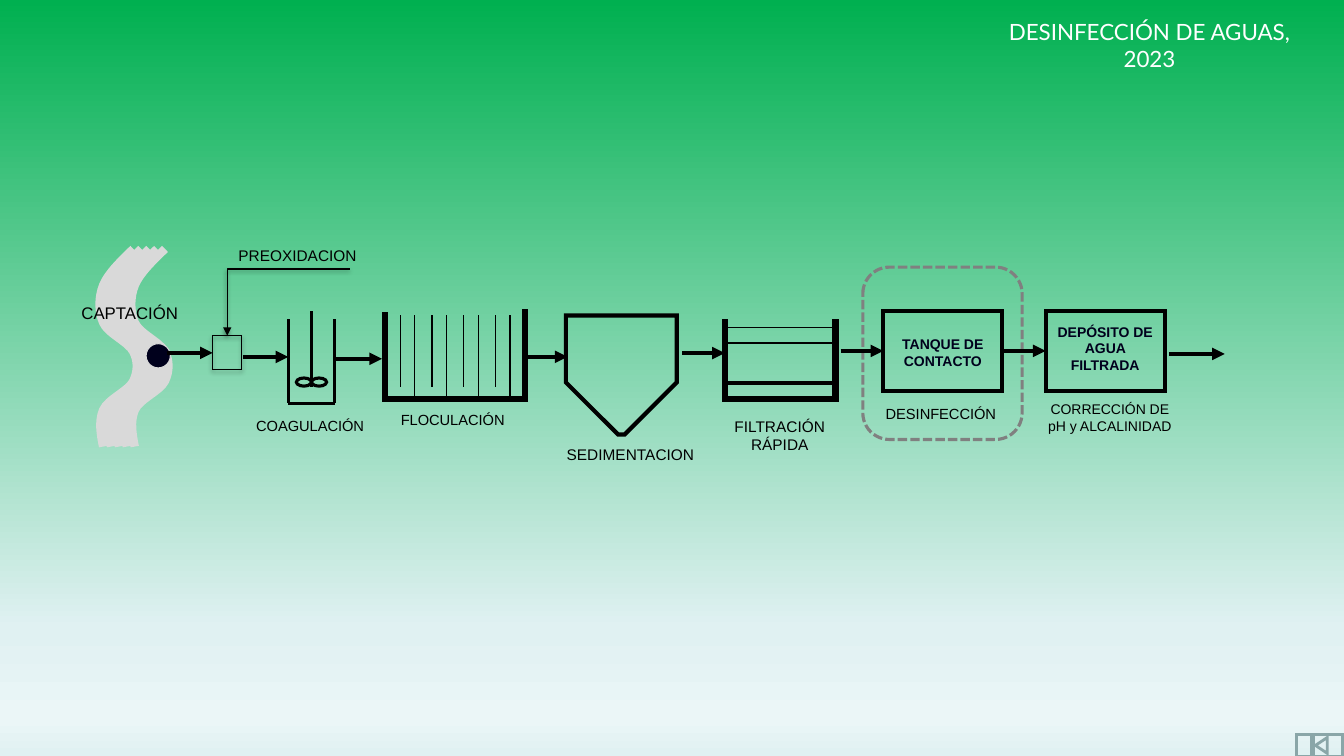
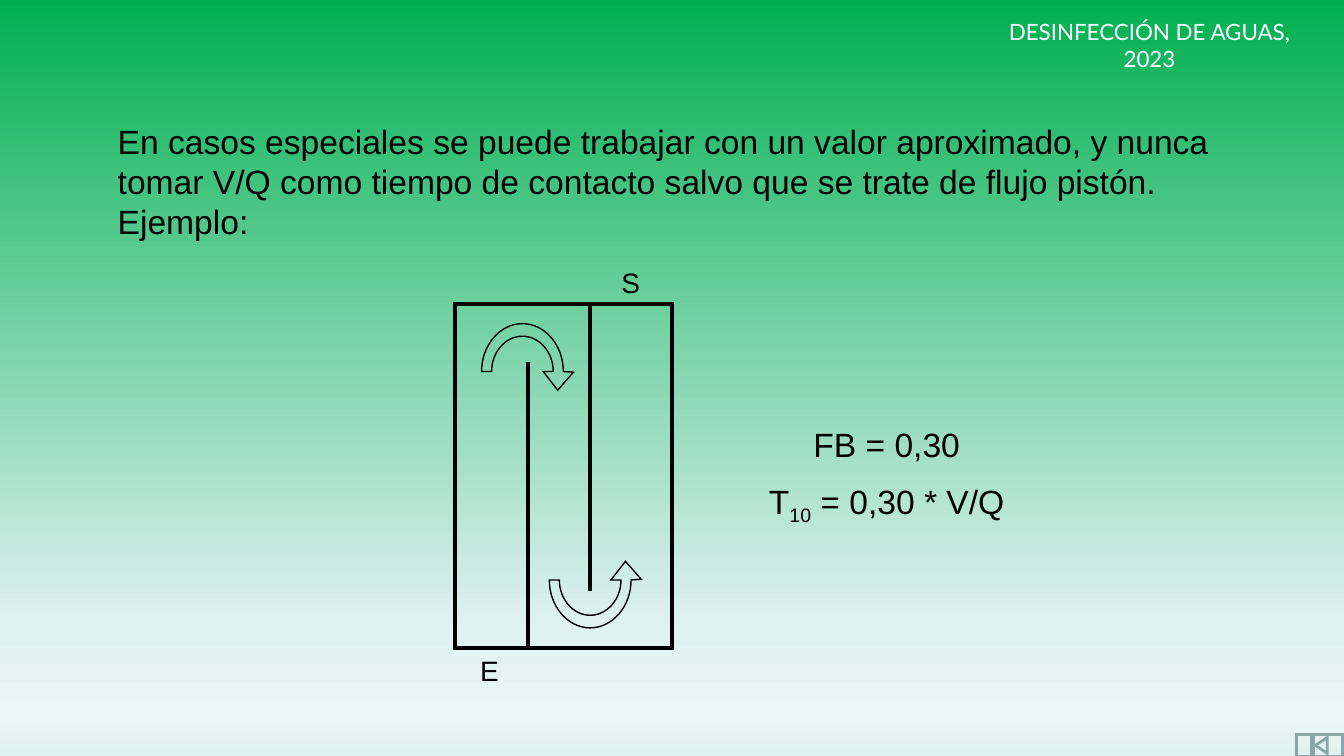
import copy
from dataclasses import dataclass

import pptx
import pptx.dml.color
import pptx.enum.dml
import pptx.enum.shapes
import pptx.enum.text
import pptx.oxml.ns
import pptx.util
from lxml import etree

Pt = pptx.util.Pt
qn = pptx.oxml.ns.qn
SHAPE = pptx.enum.shapes.MSO_SHAPE
CONNECTOR = pptx.enum.shapes.MSO_CONNECTOR
ANCHOR = pptx.enum.text.MSO_ANCHOR
ALIGN = pptx.enum.text.PP_ALIGN
TOP, LEFT, BOTTOM, RIGHT = range(4)


@dataclass(frozen=True)
class Theme:
    # Colours
    ink: str = "000000"
    navy: str = "00001C"
    white: str = "FFFFFF"
    river: str = "D9D9D9"
    frame: str = "808080"
    button: str = "8AA6A8"
    background: tuple = ((0, "00B050"), (0.83, "E0F1F2"), (0.95, "EBF6F7"), (1, "E0F1F2"))
    # Fonts and type sizes
    font: str = "Arial"
    title_font: str = "Lato"
    title: float = 16
    body: float = 24
    mark: float = 20
    large: float = 12
    label: float = 11
    small: float = 10.5
    box: float = 10
    # Line widths
    hair: float = 0.75
    thin: float = 1
    medium: float = 2.25
    thick: float = 3
    wall: float = 4.5


THEME = Theme()


def rgb(color):
    return pptx.dml.color.RGBColor.from_string(color)


def write(tf, text, size=THEME.label, color=THEME.ink, font=THEME.font, bold=False,
          align=ALIGN.LEFT, anchor=ANCHOR.TOP, gap=0):
    """Write paragraphs (lines of text); "~" switches the subscript on and off."""
    tf.word_wrap = True
    tf.auto_size = pptx.enum.text.MSO_AUTO_SIZE.NONE
    tf.vertical_anchor = anchor
    for i, line in enumerate(text.split("\n")):
        p = tf.add_paragraph() if i else tf.paragraphs[0]
        p.alignment = align
        p.space_before = Pt(gap if i else 0)
        for j, part in enumerate(line.split("~")):
            r = p.add_run()
            r.text = part
            f = r.font
            f.name, f.size, f.bold = font, Pt(size), bold
            f.color.rgb = rgb(color)
            if j % 2:
                f._rPr.set("baseline", "-25000")


class Deck:
    def __init__(self, theme):
        self.theme = theme
        self.prs = pptx.Presentation()
        self.prs.slide_width, self.prs.slide_height = Pt(960), Pt(540)
        self.s = None
        self.paint_background()

    def paint_background(self):
        master = self.prs.slide_master
        fill = master.background.fill
        fill.gradient()
        fill.gradient_angle = 270
        stops = master.element.find(".//" + qn("a:gsLst"))
        while len(stops) < len(self.theme.background):
            stops.append(copy.deepcopy(stops[0]))
        for stop, (position, color) in zip(fill.gradient_stops, self.theme.background):
            stop.position = position
            stop.color.rgb = rgb(color)

    def slide(self, title):
        self.s = self.prs.slides.add_slide(self.prs.slide_layouts[5])
        self.shape(SHAPE.ACTION_BUTTON_BEGINNING, 925.9, 524.9, 33.1, 15.1,
                   color=self.theme.button, width=2)
        sp = self.s.shapes.title
        sp.left, sp.top, sp.width, sp.height = Pt(707), Pt(9.4), Pt(228.2), Pt(26.6)
        write(sp.text_frame, title, size=self.theme.title, color=self.theme.white,
              font=self.theme.title_font, align=ALIGN.CENTER)

    def stroke(self, sp, color, width, shadow=False):
        sp.line.color.rgb = rgb(color)
        sp.line.width = Pt(width)
        props = sp.element.spPr
        effects = props.find(qn("a:effectLst"))
        if effects is None:
            effects = etree.SubElement(props, qn("a:effectLst"))
        if shadow:
            outer = etree.SubElement(effects, qn("a:outerShdw"), blurRad=str(Pt(3.1)),
                                     dist=str(Pt(1.6)), dir="5400000", rotWithShape="0")
            black = etree.SubElement(outer, qn("a:srgbClr"), val=self.theme.ink)
            etree.SubElement(black, qn("a:alpha"), val="38000")

    def shape(self, kind, x, y, w, h, color=THEME.ink, width=THEME.thick, fill=None, shadow=False):
        sp = self.s.shapes.add_shape(kind, Pt(x), Pt(y), Pt(w), Pt(h))
        self.finish(sp, color, width, fill, shadow)
        return sp

    def finish(self, sp, color, width, fill=None, shadow=False):
        sp.shadow.inherit = False
        if fill:
            sp.fill.solid()
            sp.fill.fore_color.rgb = rgb(fill)
        else:
            sp.fill.background()
        self.stroke(sp, color, width, shadow)
        etree.SubElement(sp.element.spPr.find(qn("a:ln")), qn("a:miter"), lim="800000")

    def outline(self, start, segments, color=THEME.ink, width=THEME.wall, close=False):
        """Segments hold one point for a line, three for a cubic curve."""
        builder = self.s.shapes.build_freeform(start[0] * 100, start[1] * 100, scale=Pt(1) / 100)
        builder.add_line_segments([(x * 100, y * 100) for seg in segments for x, y in seg],
                                  close=close)
        sp = builder.convert_to_shape()
        nodes = iter(sp.element.spPr.findall(".//" + qn("a:lnTo")))
        for seg in segments:
            first, *rest = [next(nodes) for _ in seg]
            if rest:
                curve = etree.Element(qn("a:cubicBezTo"))
                first.addprevious(curve)
                for node in (first, *rest):
                    curve.append(node[0])
                    node.getparent().remove(node)
        self.finish(sp, color, width)

    def line(self, x1, y1, x2, y2, width=THEME.thick, arrow=False, begin=None, end=None,
             elbow=False, shadow=False):
        kind = CONNECTOR.ELBOW if elbow else CONNECTOR.STRAIGHT
        cx = self.s.shapes.add_connector(kind, Pt(x1), Pt(y1), Pt(x2), Pt(y2))
        if elbow:
            cx.element.spPr.find(qn("a:prstGeom")).set("prst", "bentConnector2")
        if begin:
            cx.begin_connect(*begin)
        if end:
            cx.end_connect(*end)
        self.stroke(cx, self.theme.ink, width, shadow)
        if arrow:
            etree.SubElement(cx.element.spPr.find(qn("a:ln")), qn("a:tailEnd"), type="triangle")

    def text(self, text, x, y, w, h, **style):
        tb = self.s.shapes.add_textbox(Pt(x), Pt(y), Pt(w), Pt(h))
        write(tb.text_frame, text, **style)

    def named_box(self, text, x, y, w, h, top=3.6, bottom=3.6):
        sp = self.shape(SHAPE.RECTANGLE, x, y, w, h)
        tf = sp.text_frame
        tf.margin_top, tf.margin_bottom = Pt(top), Pt(bottom)
        write(tf, text, size=self.theme.box, color=self.theme.navy, bold=True,
              align=ALIGN.CENTER, anchor=ANCHOR.MIDDLE)
        return sp

    def turn_arrow(self, cx, cy, up):
        """Half-ring arrow; up is -1 for an arch and 1 for a bowl."""
        def half_ring(rx, ry):
            kx, ky = 0.55 * rx, 0.55 * ry
            return [[(rx, ky), (kx, ry), (0, ry)], [(-kx, ry), (-rx, ky), (-rx, 0)]]
        segments = half_ring(22, 25.2) + [[(-29.2, 0)]] + half_ring(-29.2, 34.2)
        # The second half ring runs left to right
        segments[3:] = [[(x, abs(y)) for x, y in seg] for seg in segments[3:]]
        segments += [[(36.4, -0.5)], [(25.2, -13.3)], [(14.8, 0)]]
        self.outline((cx + 22, cy), [[(cx + x, cy + up * y) for x, y in seg] for seg in segments],
                     width=self.theme.thin, close=True)


HEADER = "DESINFECCIÓN DE AGUAS, 2023"
RIVER = [(95.3, 177.8), (86.4, 186.5), (77.3, 195.1), (73.7, 203.8), (70.3, 212.4),
         (70.3, 222.5), (73.7, 230.4), (77, 238.3), (91.7, 244.1), (95.3, 251.3),
         (98.6, 257.8), (98.6, 265), (95.3, 272.2), (91.7, 279.4), (77, 285.1),
         (73.7, 293), (70.3, 301), (72, 310.3), (73.7, 319)]


def treatment_slide(d):
    t = d.theme
    d.slide(HEADER)

    # River and intake
    for i in range(5):
        start, *bank = [(x + 5.65 * i, y) for x, y in RIVER]
        d.outline(start, [bank[k:k + 3] for k in range(0, len(bank), 3)], color=t.river, width=6)
    d.shape(SHAPE.OVAL, 104.4, 245.5, 17.3, 17.3, color=t.river, width=t.hair, fill=t.navy)

    # Preoxidation
    preox = d.shape(SHAPE.RECTANGLE, 151.9, 239.8, 20.9, 24.5, width=t.hair, shadow=True)
    d.line(249.8, 192.2, 162.35, 239.8, width=t.thin, arrow=True, elbow=True, shadow=True,
           end=(preox, TOP))

    # Coagulation mixer
    d.line(205.9, 288, 239, 288, width=t.medium)
    for x, y1, y2 in ((205.9, 228.2, 288), (239, 228.2, 288), (222.5, 276.5, 222.5)):
        d.line(x, y1, x, y2, width=t.medium)
    for x in (211.7, 222.5):
        d.shape(SHAPE.OVAL, x, 270, 10.8, 5.8, width=t.medium)

    # Flocculation tank with baffles
    d.outline((275, 223.2), [[(275, 285.1)], [(375.1, 285.1)], [(375.1, 221)]])
    for i in range(4):
        for offset, bottom in ((0, 276.5), (10.1, 285)):
            x = 285.8 + 22.8 * i + offset
            d.line(x, 225.2, x, bottom, width=t.hair)

    # Sedimentation tank
    hopper = d.shape(SHAPE.SNIP_2_SAME_RECTANGLE, 404.2, 225.4, 79.2, 85)
    hopper.adjustments[0], hopper.adjustments[1] = 0.471, 0
    hopper.rotation = 180

    # Rapid filter
    for y, h, width in ((234, 39.6, t.thin), (273.6, 11.5, t.medium), (245, 28.1, t.hair)):
        d.shape(SHAPE.RECTANGLE, 517.7, y, 79.2, h, width=width)
    d.outline((517.7, 228.2), [[(517.7, 285.1)], [(596.9, 285.1)], [(596.9, 228.2)]])

    # Disinfection and storage
    frame = d.shape(SHAPE.ROUNDED_RECTANGLE, 616.3, 190.8, 113.8, 123.1, color=t.frame,
                    width=t.medium)
    frame.line.dash_style = pptx.enum.dml.MSO_LINE.SQUARE_DOT
    tank = d.named_box("TANQUE DE CONTACTO", 630.9, 222.2, 85, 56.9, top=5.6)
    store = d.named_box("DEPÓSITO DE AGUA FILTRADA", 746.9, 222.2, 85, 56.9, bottom=7.4)

    # Flow arrows
    for x1, x2, y in ((173.5, 205.9, 255), (239.8, 272.9, 256.3), (375.8, 405.4, 254.9),
                      (487.4, 517.7, 252.2), (835.2, 874.8, 252.8)):
        d.line(x1, y, x2, y, arrow=True)
    d.line(119.5, 252.05, 151.9, 252.05, arrow=True, end=(preox, LEFT))
    d.line(600.5, 250.65, 630.9, 250.65, arrow=True, end=(tank, LEFT))
    d.line(715.9, 250.65, 746.9, 250.65, arrow=True, begin=(tank, RIGHT), end=(store, LEFT))

    # Stage labels
    for text, x, y, w, h, size, align in (
            ("CAPTACIÓN", 51.1, 212.8, 90.7, 22, t.large, ALIGN.LEFT),
            ("PREOXIDACION", 163.2, 172.1, 108, 21, t.label, ALIGN.LEFT),
            ("COAGULACIÓN", 175.9, 294.2, 102.2, 20, t.small, ALIGN.LEFT),
            ("FLOCULACIÓN", 279.2, 289.8, 90.7, 20, t.small, ALIGN.LEFT),
            ("SEDIMENTACION", 397.7, 314.3, 119.5, 21, t.label, ALIGN.LEFT),
            ("FILTRACIÓN RÁPIDA", 505.9, 294.1, 102.2, 34, t.label, ALIGN.CENTER),
            ("DESINFECCIÓN", 625.6, 285.9, 96.5, 20, t.small, ALIGN.LEFT),
            ("CORRECCIÓN DE pH y ALCALINIDAD", 735.8, 282.4, 113.8, 32, t.box, ALIGN.CENTER)):
        d.text(text, x, y, w, h, size=size, align=align)


def contact_time_slide(d):
    t = d.theme
    d.slide(HEADER)

    # Explanation and formula
    d.text("En casos especiales se puede trabajar con un valor aproximado, y nunca tomar V/Q "
           "como tiempo de contacto salvo que se trate de flujo pistón.\nEjemplo:",
           77, 82.6, 838.8, 94.3, size=t.body)
    d.text("FB = 0,30\nT~10~ = 0,30 * V/Q", 496.6, 299.2, 273.6, 80, size=t.body,
           align=ALIGN.CENTER, gap=12)

    # Tank with two baffles
    d.shape(SHAPE.RECTANGLE, 325, 217.2, 155, 246)
    d.line(376.9, 463, 376.9, 258.5)
    d.line(421.6, 421.9, 421.6, 217.4)
    d.turn_arrow(373.2, 265.4, up=-1)
    d.turn_arrow(421.6, 414.3, up=1)

    # Inlet and outlet
    for text, x, y in (("E", 327.4, 463), ("S", 428.2, 185.8)):
        d.text(text, x, y, 44.6, 31, size=t.mark, align=ALIGN.CENTER)


def main():
    d = Deck(THEME)
    treatment_slide(d)
    contact_time_slide(d)
    d.prs.save("out.pptx")


if __name__ == "__main__":
    main()
